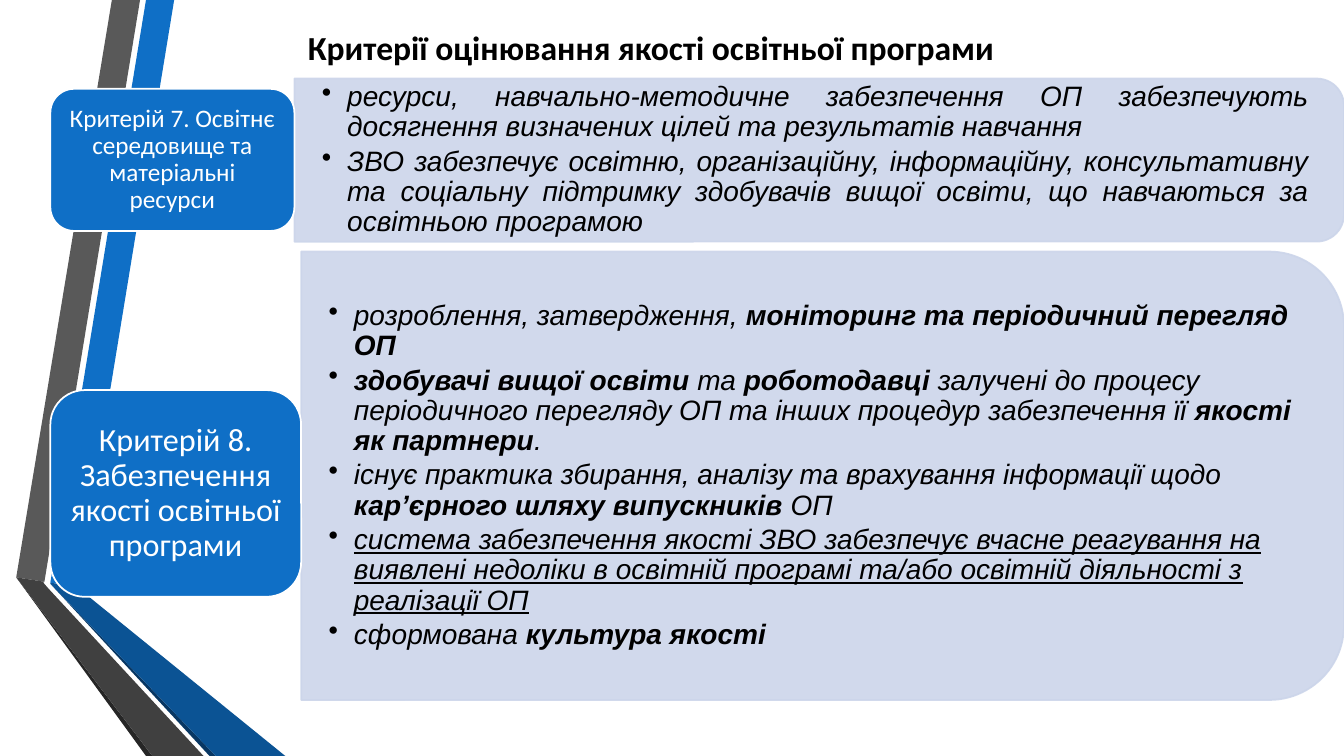
from lxml import etree
from pptx import Presentation
from pptx.dml.color import RGBColor
from pptx.enum import shapes, text
from pptx.oxml import ns
from pptx.util import Cm, Pt

COLORS = {"blue": "0F6FC6", "deep_blue": "0B5394", "navy": "083763",
          "grey": "595959", "dark_grey": "404040", "charcoal": "262626",
          "panel": "CCD5EA", "white": "FFFFFF", "black": "000000"}
WIDTH, HEIGHT = 33.87, 19.05  # all lengths are in centimetres

TITLE = "Критерії оцінювання якості освітньої програми "

# Each point is a list of (text, style) runs: "b" bold, "u" underlined
CRITERIA = [
    {"name": "Критерій 7. Освітнє середовище та матеріальні ресурси",
     "size": 18, "label": (2.24, 6.15, 3.58), "panel": (1.98, 4.11), "align": "JUSTIFY",
     "points": [
         [("ресурси, навчально-методичне забезпечення ОП забезпечують "
           "досягнення визначених цілей та результатів навчання", "")],
         [("ЗВО забезпечує освітню, організаційну, інформаційну, консультативну "
           "та соціальну підтримку здобувачів вищої освіти, що навчаються за "
           "освітньою програмою ", "")]]},
    {"name": "Критерій 8. Забезпечення якості освітньої програми",
     "size": 23, "label": (9.83, 6.32, 5.21), "panel": (6.34, 11.3), "align": "LEFT",
     "points": [
         [("розроблення, затвердження, ", ""),
          ("моніторинг та періодичний перегляд ОП", "b")],
         [("здобувачі вищої освіти", "b"), (" та ", ""), ("роботодавці ", "b"),
          ("залучені до процесу періодичного перегляду ОП та інших процедур "
           "забезпечення її ", ""),
          ("якості як партнери", "b"), (".", "")],
         [("існує практика збирання, аналізу та врахування інформації щодо ", ""),
          ("кар’єрного шляху випускників ", "b"), ("ОП", "")],
         [("система забезпечення якості ЗВО забезпечує вчасне реагування на "
           "виявлені недоліки в освітній програмі та/або освітній діяльності з "
           "реалізації ОП", "u")],
         [("сформована ", ""), ("культура якості", "b")]]},
]
LABEL_LEFT = 1.27
CORNER_INSET = 0.049  # share of the height that a rounded corner takes from the text

RIBBONS = [
    ("blue", [(1.27, 14.68), (1.96, 14.81), (4.39, 0), (3.68, 0)]),
    ("grey", [(3.53, 0), (2.82, 0), (0.41, 14.55), (1.12, 14.66)]),
    ("charcoal", [(0.41, 14.55), (3.68, HEIGHT), (3.84, HEIGHT)]),
    ("navy", [(1.27, 14.71), (5.28, HEIGHT), (5.44, HEIGHT)]),
    ("deep_blue", [(1.27, 14.71), (5.44, HEIGHT), (7.19, HEIGHT),
                   (1.96, 14.81), (1.27, 14.68)]),
    ("dark_grey", [(5.13, HEIGHT), (1.22, 14.83), (1.09, 14.68), (1.12, 14.66),
                   (0.41, 14.55), (3.84, HEIGHT)]),
]

prs = Presentation()
prs.slide_width, prs.slide_height = Cm(WIDTH), Cm(HEIGHT)
slide = prs.slides.add_slide(prs.slide_layouts[6])


def paint(shape, fill, line=None, alpha=None):
    shape.shadow.inherit = False
    shape.fill.solid()
    shape.fill.fore_color.rgb = RGBColor.from_string(COLORS[fill])
    if line:
        shape.line.color.rgb = RGBColor.from_string(COLORS[line])
        shape.line.width = Pt(1.25)
    else:
        shape.line.fill.background()
    if alpha:
        for color in shape._element.spPr.iter(ns.qn("a:srgbClr")):
            etree.SubElement(color, ns.qn("a:alpha"), val=str(alpha * 1000))


def write(shape, paragraphs, *, size, font, color="black", align="CENTER", margins=(0.25, 0.13),
          italic=False, bold=False, bullet=False, spacing=None, after=0):
    frame = shape.text_frame
    frame.word_wrap = True
    frame.vertical_anchor = text.MSO_ANCHOR.MIDDLE
    frame.margin_left = frame.margin_right = Cm(margins[0])
    frame.margin_top = frame.margin_bottom = Cm(margins[1])
    for i, runs in enumerate(paragraphs):
        p = frame.add_paragraph() if i else frame.paragraphs[0]
        p.alignment = text.PP_ALIGN[align]
        p.line_spacing = spacing
        p.space_after = Pt(after)
        if bullet:
            props = p._p.get_or_add_pPr()
            props.set("marL", str(Cm(0.64)))
            props.set("indent", str(Cm(-0.64)))
            etree.SubElement(props, ns.qn("a:buChar"), char="•")
        for words, style in runs:
            run = p.add_run()
            run.text = words
            run.font.size, run.font.name = Pt(size), font
            run.font.color.rgb = RGBColor.from_string(COLORS[color])
            run.font.italic = italic
            run.font.bold = bold or "b" in style
            run.font.underline = "u" in style


def add_panel(left, top, width, height):
    """Rectangle rounded on its right side: a top-rounded one turned by 90 degrees."""
    shift = (width - height) / 2
    panel = slide.shapes.add_shape(shapes.MSO_SHAPE.ROUND_2_SAME_RECTANGLE, Cm(left + shift),
                                   Cm(top - shift), Cm(height), Cm(width))
    panel.rotation = 90
    paint(panel, "panel", line="panel", alpha=90)


for color, corners in RIBBONS:
    start, *rest = [(Cm(x), Cm(y)) for x, y in corners]
    outline = slide.shapes.build_freeform(*start)
    outline.add_line_segments(rest, close=True)
    paint(outline.convert_to_shape(), color)

title = slide.shapes.add_textbox(Cm(1.9), Cm(0.36), Cm(29.21), Cm(1.63))
write(title, [[(TITLE, "")]], size=24, font="Calibri", bold=True)

for criterion in CRITERIA:
    label_top, label_width, label_height = criterion["label"]
    panel_top, panel_height = criterion["panel"]
    panel_left = LABEL_LEFT + label_width
    panel_width = WIDTH - panel_left
    add_panel(panel_left, panel_top, panel_width, panel_height)

    inset = CORNER_INSET * panel_height
    points = slide.shapes.add_textbox(Cm(panel_left), Cm(panel_top + inset),
                                      Cm(panel_width - inset), Cm(panel_height - 2 * inset))
    write(points, criterion["points"], size=20, font="Arial", align=criterion["align"],
          margins=(0.69, 0.36), italic=True, bullet=True, spacing=0.9, after=3)

    label = slide.shapes.add_shape(shapes.MSO_SHAPE.ROUNDED_RECTANGLE, Cm(LABEL_LEFT),
                                   Cm(label_top), Cm(label_width), Cm(label_height))
    paint(label, "blue", line="white")
    size = criterion["size"]
    write(label, [[(criterion["name"], "")]], size=size, font="Calibri", color="white",
          margins=(0.01 * size, 0.005 * size), spacing=0.9, after=0.35 * size)

prs.save("out.pptx")
